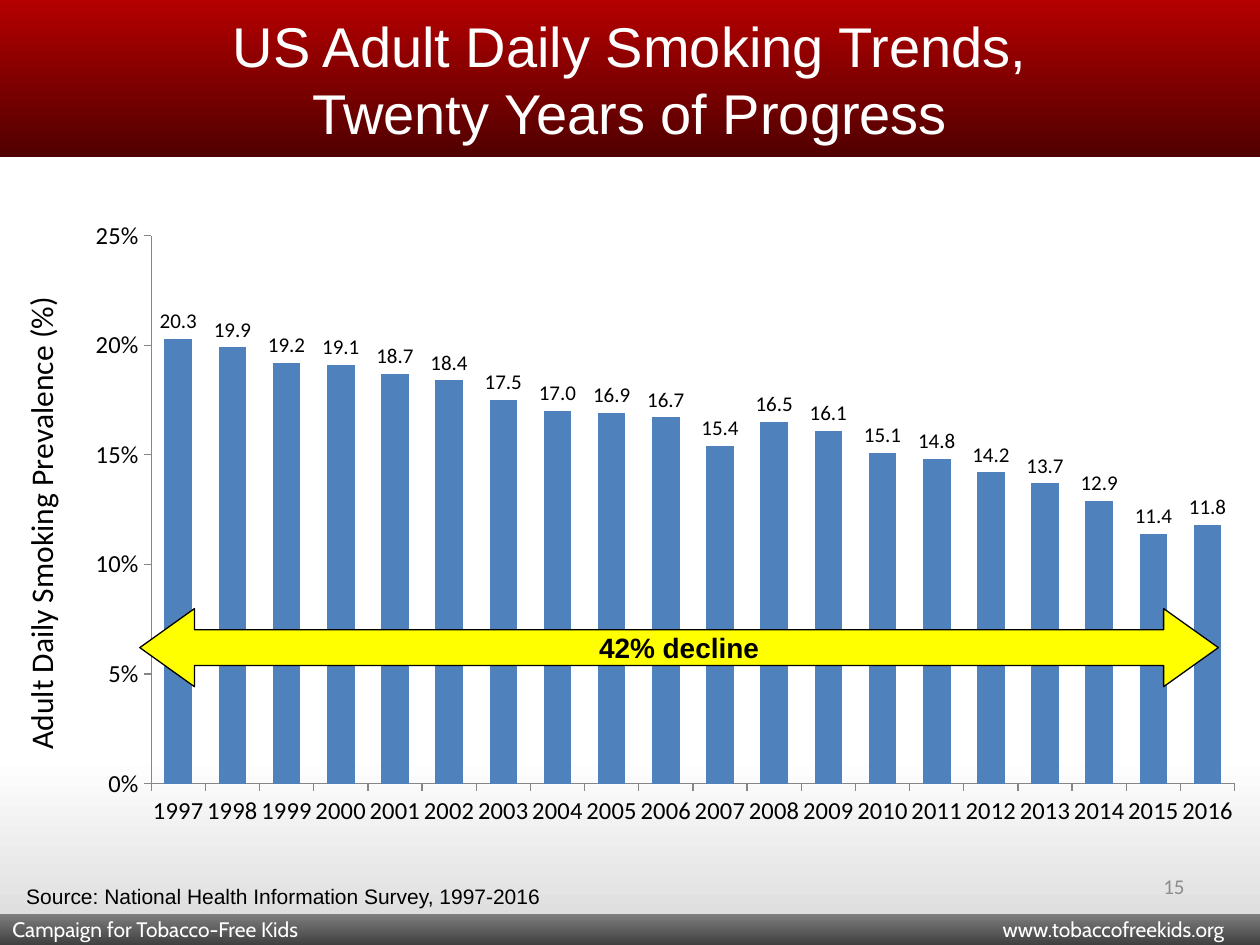
import dataclasses

import lxml.etree
import pptx
import pptx.chart.data
import pptx.dml.color
import pptx.enum.chart
import pptx.enum.shapes
import pptx.enum.text
import pptx.oxml
import pptx.oxml.ns
import pptx.util

# The slide is a grid of 100 columns by 75 rows
COLUMNS, ROWS = 100, 75
SLIDE_WIDTH, SLIDE_HEIGHT = pptx.util.Inches(10), pptx.util.Inches(7.5)

ALIGN = pptx.enum.text.PP_ALIGN
ANCHOR = pptx.enum.text.MSO_ANCHOR
SHAPE = pptx.enum.shapes.MSO_SHAPE

FIRST_YEAR = 1997
PREVALENCE = [20.3, 19.9, 19.2, 19.1, 18.7, 18.4, 17.5, 17.0, 16.9, 16.7,
              15.4, 16.5, 16.1, 15.1, 14.8, 14.2, 13.7, 12.9, 11.4, 11.8]


@dataclasses.dataclass(frozen=True)
class Theme:
    black: str = "000000"
    white: str = "FFFFFF"
    muted: str = "8C8C8C"
    axis: str = "868686"
    bar: str = "4F81BD"
    arrow: str = "FFFF00"
    background: tuple = ((0.8, "FFFFFF"), (1, "D9D9D9"))
    header: tuple = ((0, "B40000"), (1, "500000"))
    footer: tuple = ((0, "808080"), (1, "404040"))
    body_font: str = "Arial"
    chart_font: str = "Calibri"
    footer_font: str = "Cabin"
    title_size: int = 32
    axis_title_size: int = 18
    arrow_size: int = 16
    axis_size: int = 14
    small_size: int = 12


THEME = Theme()


def rgb(value):
    return pptx.dml.color.RGBColor.from_string(value)


def grid(column, row, columns, rows):
    """Turn grid units into left, top, width and height."""
    return (int(SLIDE_WIDTH * column / COLUMNS), int(SLIDE_HEIGHT * row / ROWS),
            int(SLIDE_WIDTH * columns / COLUMNS), int(SLIDE_HEIGHT * rows / ROWS))


def format_font(font, size, color=THEME.black, name=THEME.body_font, bold=False):
    font.size = pptx.util.Pt(size)
    font.name = name
    font.bold = bold
    font.color.rgb = rgb(color)


def write_text(shape, text, align=ALIGN.LEFT, anchor=ANCHOR.MIDDLE, wrap=True,
               right_tab=None, **font_format):
    frame = shape.text_frame
    frame.auto_size = pptx.enum.text.MSO_AUTO_SIZE.NONE
    frame.word_wrap = wrap
    frame.vertical_anchor = anchor
    frame.text = text
    paragraph = frame.paragraphs[0]
    paragraph.alignment = align
    if right_tab:
        properties = paragraph._p.get_or_add_pPr()
        tabs = lxml.etree.SubElement(properties, pptx.oxml.ns.qn("a:tabLst"))
        lxml.etree.SubElement(tabs, pptx.oxml.ns.qn("a:tab"),
                              pos=str(right_tab), algn="r")
    for run in paragraph.runs:
        format_font(run.font, **font_format)


def fill_gradient(fill, stops):
    """Fill from top to bottom."""
    fill.gradient()
    fill.gradient_angle = 270
    for stop, (position, color) in zip(fill.gradient_stops, stops):
        stop.position = position
        stop.color.rgb = rgb(color)


def add_band(slide, place, stops):
    band = slide.shapes.add_shape(SHAPE.RECTANGLE, *place)
    band.shadow.inherit = False
    band.line.fill.background()
    fill_gradient(band.fill, stops)
    return band


def add_text(slide, place, text, **text_format):
    write_text(slide.shapes.add_textbox(*place), text, **text_format)


def add_title(slide, place, text):
    title = slide.shapes.title
    title.left, title.top, title.width, title.height = place
    write_text(title, text, align=ALIGN.CENTER, size=THEME.title_size,
               color=THEME.white)
    # Bring the title in front of the header band
    slide.shapes._spTree.append(title._element)


def add_double_arrow(slide, place, text):
    arrow = slide.shapes.add_shape(SHAPE.LEFT_RIGHT_ARROW, *place)
    arrow.shadow.inherit = False
    arrow.adjustments[0], arrow.adjustments[1] = 0.46, 0.7
    arrow.fill.solid()
    arrow.fill.fore_color.rgb = rgb(THEME.arrow)
    arrow.line.color.rgb = rgb(THEME.black)
    arrow.line.width = pptx.util.Pt(0.75)
    write_text(arrow, text, align=ALIGN.CENTER, wrap=False,
               size=THEME.arrow_size, bold=True)


def set_plot_area(chart, **shares):
    """Fix the inner plot area as shares of the chart."""
    plot_area = chart._chartSpace.chart.plotArea
    for layout in plot_area.findall(pptx.oxml.ns.qn("c:layout")):
        plot_area.remove(layout)
    sizes = "".join(f'<c:{key} val="{share}"/>' for key, share in shares.items())
    plot_area.insert(0, pptx.oxml.parse_xml(
        f'<c:layout {pptx.oxml.ns.nsdecls("c")}><c:manualLayout>'
        '<c:layoutTarget val="inner"/><c:xMode val="edge"/><c:yMode val="edge"/>'
        f'{sizes}</c:manualLayout></c:layout>'))


def format_axis(axis):
    axis.has_major_gridlines = False
    axis.major_tick_mark = pptx.enum.chart.XL_TICK_MARK.OUTSIDE
    axis.format.line.color.rgb = rgb(THEME.axis)
    format_font(axis.tick_labels.font, THEME.axis_size, name=THEME.chart_font)


def add_trend_chart(slide, place):
    data = pptx.chart.data.CategoryChartData(number_format="0.00%")
    data.categories = [str(FIRST_YEAR + index) for index in range(len(PREVALENCE))]
    data.add_series("Series 1", [round(value / 100, 3) for value in PREVALENCE])
    chart = slide.shapes.add_chart(
        pptx.enum.chart.XL_CHART_TYPE.COLUMN_CLUSTERED, *place, data).chart
    chart.has_legend = False
    chart.has_title = False
    format_font(chart.font, THEME.axis_title_size, name=THEME.chart_font)
    set_plot_area(chart, x=0.12, y=0.04, w=0.86, h=0.87)

    # Axes
    format_axis(chart.category_axis)
    value_axis = chart.value_axis
    format_axis(value_axis)
    value_axis.minimum_scale, value_axis.maximum_scale = 0, 0.25
    value_axis.major_unit = 0.05
    value_axis.tick_labels.number_format = "0%"
    value_axis.tick_labels.number_format_is_linked = False
    title_frame = value_axis.axis_title.text_frame
    title_frame.text = "Adult Daily Smoking Prevalence (%)"
    format_font(title_frame.paragraphs[0].runs[0].font, THEME.axis_title_size,
                name=THEME.chart_font)

    # Columns, labelled without the percent sign
    plot = chart.plots[0]
    plot.gap_width = 96
    plot.vary_by_categories = False
    series = plot.series[0]
    series.format.fill.solid()
    series.format.fill.fore_color.rgb = rgb(THEME.bar)
    for index, value in enumerate(PREVALENCE):
        label = series.points[index].data_label
        label.text_frame.text = f"{value:.1f}"
        format_font(label.text_frame.paragraphs[0].runs[0].font,
                    THEME.small_size, name=THEME.chart_font)
        label.position = pptx.enum.chart.XL_LABEL_POSITION.OUTSIDE_END


def main():
    presentation = pptx.Presentation()
    presentation.slide_width, presentation.slide_height = SLIDE_WIDTH, SLIDE_HEIGHT
    slide = presentation.slides.add_slide(presentation.slide_layouts[5])
    fill_gradient(slide.background.fill, THEME.background)

    # Header and footer
    add_band(slide, grid(0, 0, COLUMNS, 12.5), THEME.header)
    footer = add_band(slide, grid(0, 72.5, COLUMNS, 2.5), THEME.footer)
    write_text(footer, "Campaign for Tobacco-Free Kids\twww.tobaccofreekids.org",
               right_tab=pptx.util.Inches(9.62), size=THEME.small_size,
               color=THEME.white, name=THEME.footer_font)
    add_title(slide, grid(14, 0, 72, 12.5),
              "US Adult Daily Smoking Trends,\vTwenty Years of Progress")
    add_text(slide, grid(71.7, 68.3, 23.3, 4), "15", align=ALIGN.RIGHT,
             size=THEME.small_size, color=THEME.muted, name=THEME.chart_font)

    # Chart with its message and source
    add_trend_chart(slide, grid(0, 16.7, COLUMNS, 50))
    add_double_arrow(slide, grid(11.1, 48.3, 85.6, 6.2), "42% decline")
    add_text(slide, grid(1.1, 69.6, 43.1, 3),
             "Source: National Health Information Survey, 1997-2016",
             anchor=ANCHOR.TOP, wrap=False, size=THEME.small_size)
    presentation.save("out.pptx")


if __name__ == "__main__":
    main()
